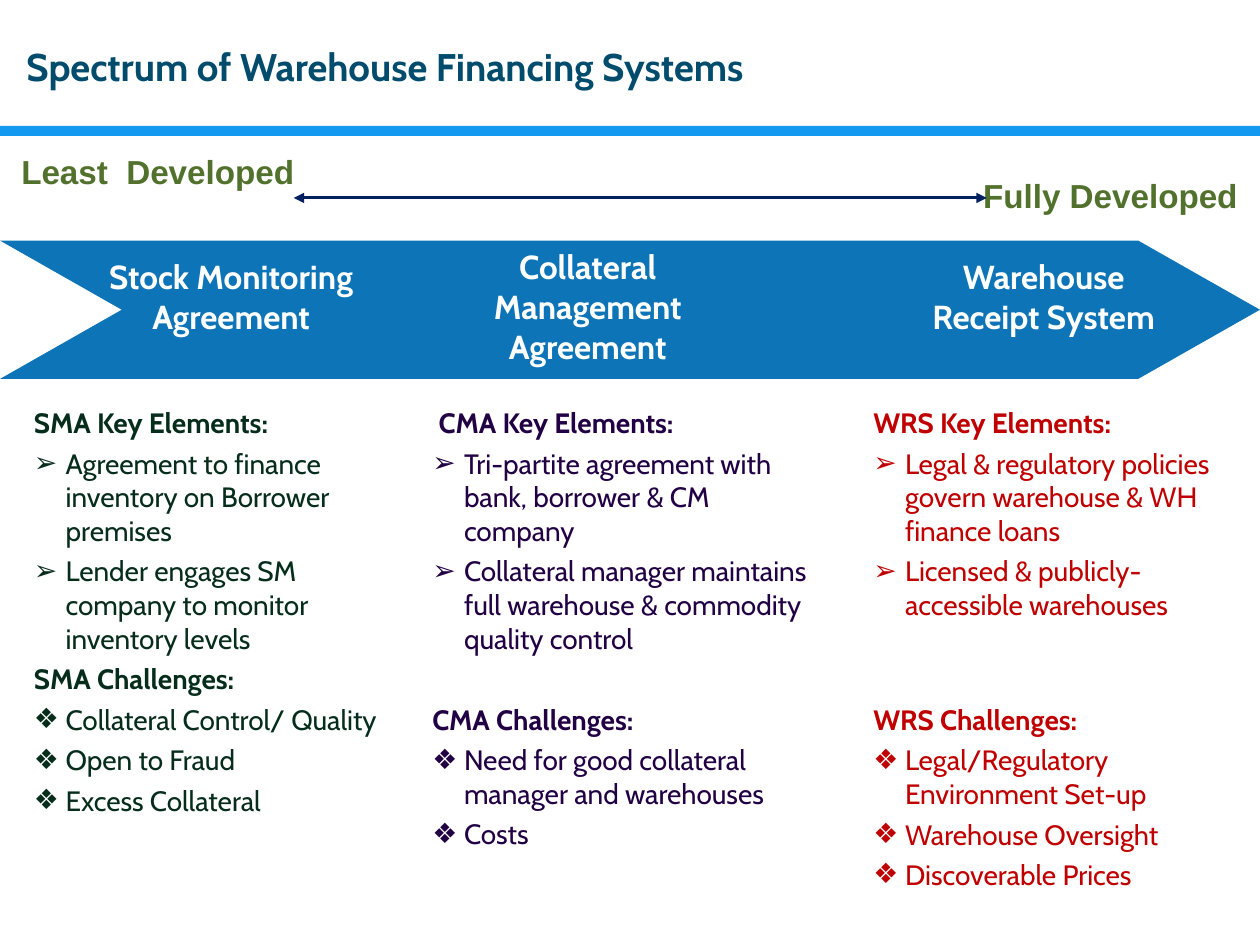
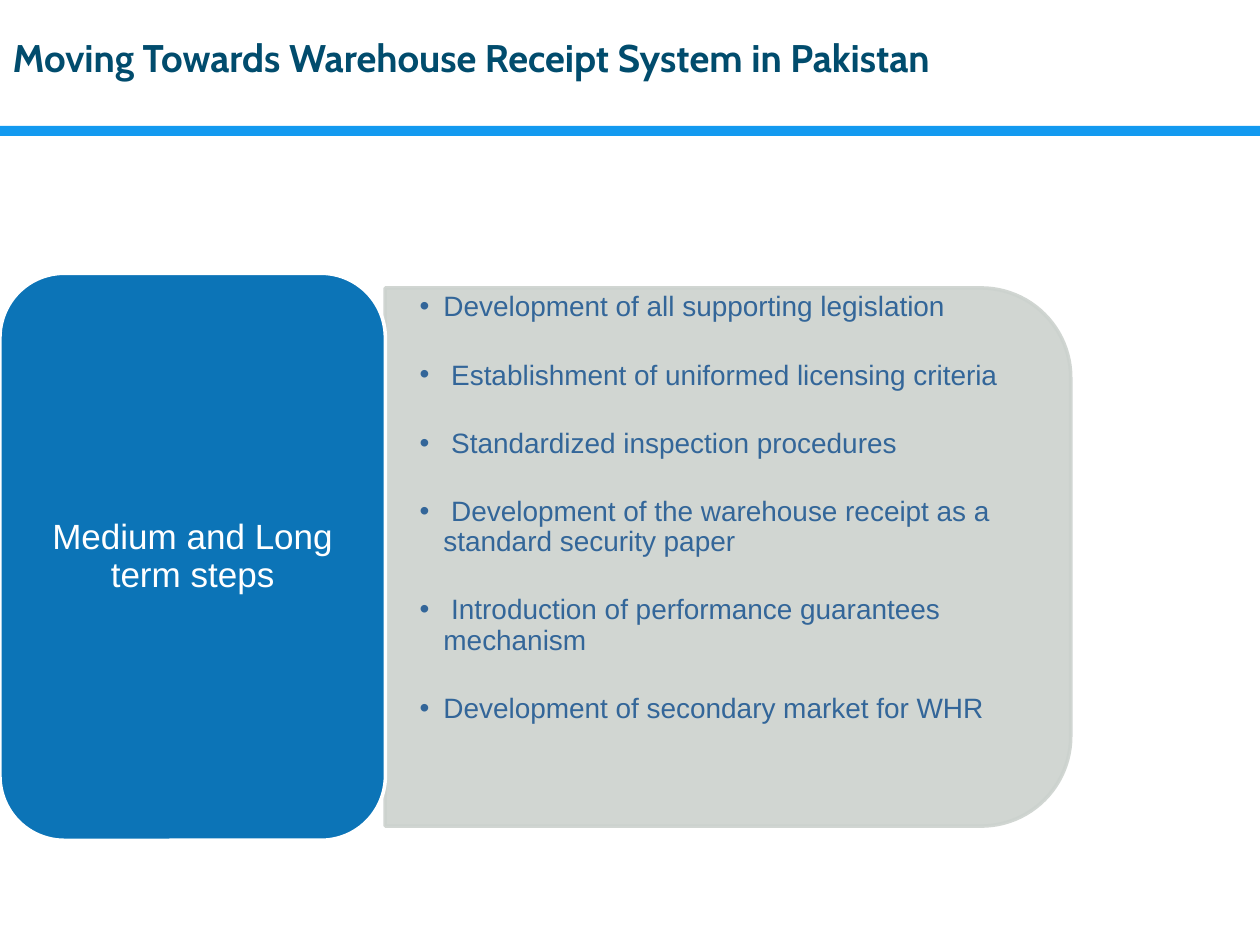
from lxml import etree
from pptx import Presentation
from pptx.dml.color import RGBColor
from pptx.enum.shapes import MSO_CONNECTOR, MSO_SHAPE
from pptx.enum.text import MSO_ANCHOR, MSO_AUTO_SIZE, PP_ALIGN
from pptx.oxml.ns import qn
from pptx.util import Cm, Pt

LEFT, CENTER, RIGHT = PP_ALIGN.LEFT, PP_ALIGN.CENTER, PP_ALIGN.RIGHT
TOP, MIDDLE = MSO_ANCHOR.TOP, MSO_ANCHOR.MIDDLE
COMPARISON_LAYOUT, CONTENT_LAYOUT = 4, 1

HEAD_FONT, PLAIN_FONT = "Cabin", "Arial"
WHITE, BLUE, BAND = "FFFFFF", "0C74B7", "139AF0"
TITLE, GREEN, NAVY = "014C6D", "51712D", "002060"
PANEL, STEP_TEXT = "CCD2CE", "336699"

SLIDE_W, SLIDE_H = 25.4, 19.05
ARROW, DIAMOND, DOT = "➢", "❖", "•"

# left, width, colour, gap above the challenges (pt), abbreviation, elements, challenges
COLUMNS = [
    (0.43, 7.62, "062D1B", 0, "SMA",
     ["Agreement to finance inventory on Borrower premises",
      "Lender engages SM company to monitor inventory levels"],
     ["Collateral Control/ Quality", "Open to Fraud", "Excess Collateral"]),
    (8.46, 8.26, "210044", 23.2, " CMA",
     ["Tri-partite agreement with bank, borrower & CM company",
      "Collateral manager maintains full warehouse & commodity quality control"],
     ["Need for good collateral manager and warehouses", "Costs"]),
    (17.35, 8.05, "C00000", 42.4, "WRS",
     ["Legal & regulatory policies govern warehouse & WH finance loans",
      "Licensed & publicly-accessible warehouses"],
     ["Legal/Regulatory Environment Set-up", "Warehouse Oversight",
      "Discoverable Prices"]),
]

# left, top, text
STAGES = [
    (1.7, 5.05, "Stock Monitoring Agreement"),
    (8.89, 4.85, "Collateral Management Agreement"),
    (18.08, 5.05, "Warehouse Receipt System"),
]

STEPS = [
    "Development of all supporting legislation",
    " Establishment of uniformed licensing criteria",
    " Standardized inspection procedures",
    " Development of the warehouse receipt as a standard security paper",
    " Introduction of performance guarantees mechanism",
    "Development of secondary market for WHR",
]


def rgb(value):
    return RGBColor.from_string(value)


def sub(parent, tag, **attrs):
    return etree.SubElement(parent, qn(tag), attrs)


def place(sp, left, top, width, height):
    sp.left, sp.top, sp.width, sp.height = Cm(left), Cm(top), Cm(width), Cm(height)


def style(p, size, color, font, bold=False, align=LEFT):
    p.alignment = align
    p.space_before = Pt(0)
    for r in p.runs:
        r.font.size, r.font.bold, r.font.name = Pt(size), bold, font
        r.font.color.rgb = rgb(color)


def set_bullet(p, char, indent):
    """Hang the paragraph by indent (cm); without a char it has no bullet."""
    pPr = p._p.get_or_add_pPr()
    pPr.set("marL", str(Cm(indent)))
    pPr.set("indent", str(-Cm(indent)))
    if char:
        sub(pPr, "a:buFont", typeface=PLAIN_FONT)
        sub(pPr, "a:buChar", char=char)
    else:
        sub(pPr, "a:buNone")


def set_frame(tf, anchor=TOP):
    tf.word_wrap = True
    tf.auto_size = MSO_AUTO_SIZE.NONE
    tf.vertical_anchor = anchor


def add_paragraph(tf, first):
    return tf.paragraphs[0] if first else tf.add_paragraph()


def add_label(s, box, text, size, color, font, align):
    tf = s.shapes.add_textbox(*map(Cm, box)).text_frame
    set_frame(tf)
    tf.text = text
    style(tf.paragraphs[0], size, color, font, True, align)


def add_filled(s, kind, box, fill, line=None, opacity=100):
    sp = s.shapes.add_shape(kind, *map(Cm, box))
    sp.shadow.inherit = False
    sp.fill.solid()
    sp.fill.fore_color.rgb = rgb(fill)
    if line:
        sp.line.color.rgb = rgb(line)
        sp.line.width = Pt(2)
    else:
        sp.line.fill.background()
    if opacity < 100:
        for clr in sp._element.spPr.iter(qn("a:srgbClr")):
            sub(clr, "a:alpha", val=str(opacity * 1000))
    return sp


def add_double_arrow(s, x1, x2, y, color, width):
    cn = s.shapes.add_connector(MSO_CONNECTOR.STRAIGHT, Cm(x1), Cm(y), Cm(x2), Cm(y))
    cn.line.color.rgb = rgb(color)
    cn.line.width = Pt(width)
    ln = cn.line._get_or_add_ln()
    sub(ln, "a:headEnd", type="triangle")
    sub(ln, "a:tailEnd", type="triangle")
    sub(cn._element.spPr, "a:effectLst")


def new_slide(prs, layout, title, left, top):
    """Add a slide with the shared title style and the band below it."""
    s = prs.slides.add_slide(prs.slide_layouts[layout])
    place(s.shapes.title, left, top, 22.5, 1.19)
    tf = s.shapes.title.text_frame
    set_frame(tf)
    tf.text = title
    style(tf.paragraphs[0], 22, TITLE, HEAD_FONT, True)
    add_filled(s, MSO_SHAPE.RECTANGLE, (0, 2.54, SLIDE_W, 0.2), BAND)
    return s


def fill_column(sp, left, width, color, gap, name, elements, challenges):
    place(sp, left, 8.05, width, 10.13)
    tf = sp.text_frame
    set_frame(tf)
    items = [(None, f"{name} Key Elements:")]
    items += [(ARROW, text) for text in elements]
    items += [(None, f"{name.strip()} Challenges:")]
    items += [(DIAMOND, text) for text in challenges]
    for i, (char, text) in enumerate(items):
        p = add_paragraph(tf, i == 0)
        p.text = text
        set_bullet(p, char, 0.64)
        style(p, 16, color, HEAD_FONT, bold=char is None)
        p.space_after = Pt(4)
        if i and char is None:
            p.space_before = Pt(gap)


def build_spectrum(prs):
    s = new_slide(prs, COMPARISON_LAYOUT, "Spectrum of Warehouse Financing Systems",
                  0.28, 0.74)
    bodies = [sp for sp in s.placeholders if sp.placeholder_format.idx > 0]
    for sp, column in zip(bodies, COLUMNS):
        fill_column(sp, *column)
    for sp in bodies[len(COLUMNS):]:
        sp.element.getparent().remove(sp.element)

    chevron = add_filled(s, MSO_SHAPE.CHEVRON, (0, 4.85, SLIDE_W, 2.79), BLUE)
    chevron.adjustments[0] = 0.88
    for left, top, text in STAGES:
        add_label(s, (left, top, 5.92, 2.69), text, 19, WHITE, HEAD_FONT, CENTER)

    add_label(s, (0.18, 2.92, 6.02, 1.07), "Least  Developed", 19, GREEN,
              PLAIN_FONT, LEFT)
    add_label(s, (19.05, 3.4, 6.15, 1.07), "Fully Developed", 19, GREEN,
              PLAIN_FONT, RIGHT)
    add_double_arrow(s, 5.92, 19.89, 3.99, NAVY, 1.75)


def build_steps(prs):
    s = new_slide(prs, CONTENT_LAYOUT,
                  "Moving Towards Warehouse Receipt System in Pakistan", 0, 0.56)
    panel = add_filled(s, MSO_SHAPE.ROUND_2_SAME_RECTANGLE, (9.25, 4.32, 10.85, 13.82),
                       PANEL, PANEL, 90)
    panel.rotation = 90

    phase = add_filled(s, MSO_SHAPE.ROUNDED_RECTANGLE, (0, 5.51, 7.77, 11.43), BLUE, WHITE)
    tf = phase.text_frame
    set_frame(tf, MIDDLE)
    tf.margin_left = tf.margin_right = Cm(0.58)
    tf.text = "Medium and Long term steps"
    style(tf.paragraphs[0], 20, WHITE, PLAIN_FONT, align=CENTER)
    tf.paragraphs[0].line_spacing = 0.9

    body = s.placeholders[1]
    place(body, 7.77, 5.9, 13.28, 10.3)
    body.element.getparent().append(body.element)  # in front of the panel
    tf = body.text_frame
    set_frame(tf)
    tf.margin_left = tf.margin_right = Cm(0.69)
    tf.margin_top = 0
    for i, text in enumerate(STEPS):
        p = add_paragraph(tf, i == 0)
        p.text = text
        set_bullet(p, DOT, 0.48)
        style(p, 16, STEP_TEXT, PLAIN_FONT)
        p.line_spacing = 0.9
        p.space_after = Pt(21.7)


def main():
    prs = Presentation()
    prs.slide_width, prs.slide_height = Cm(SLIDE_W), Cm(SLIDE_H)
    build_spectrum(prs)
    build_steps(prs)
    prs.save("out.pptx")


if __name__ == "__main__":
    main()
